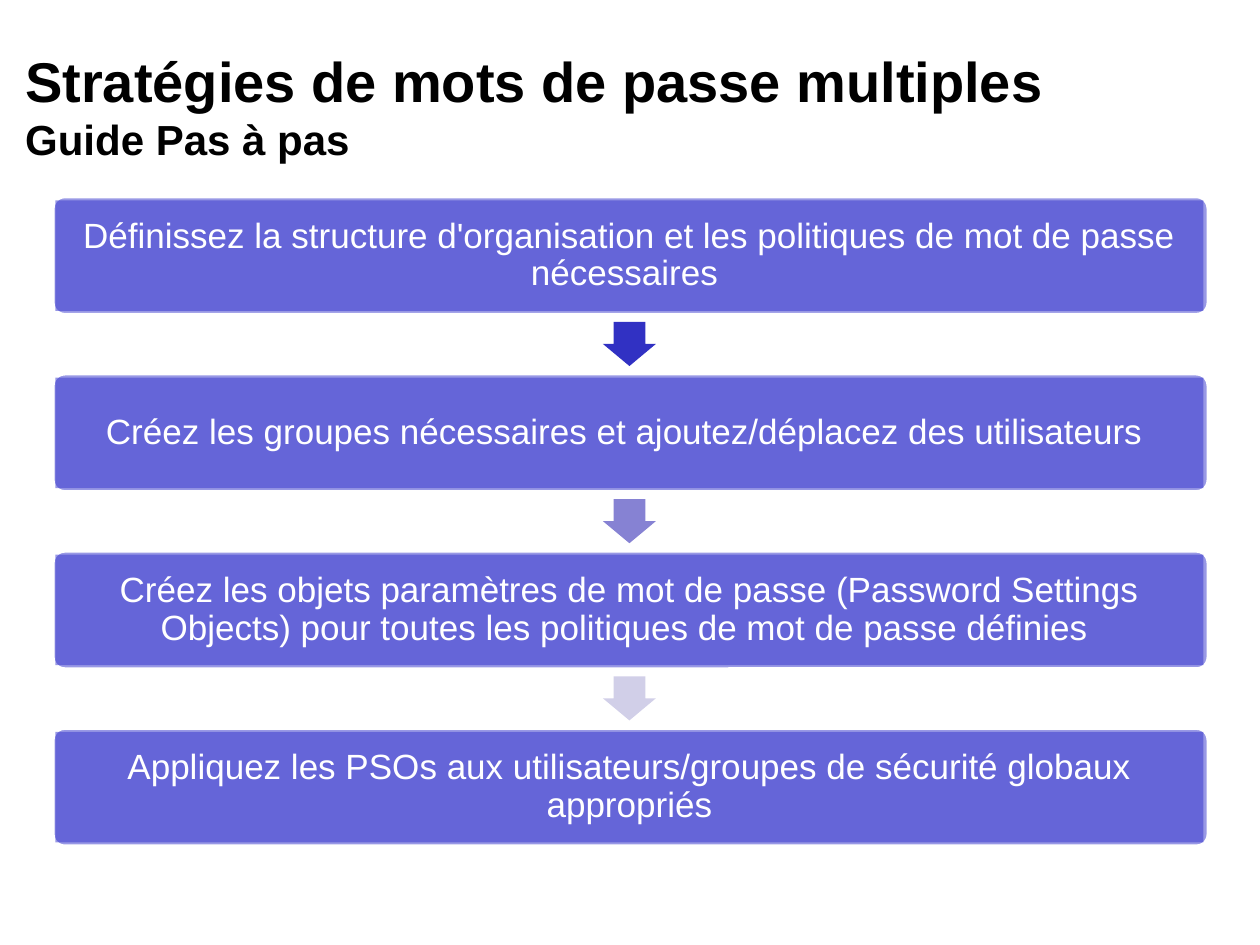
"""Build the slide on multiple password policies: four steps joined by arrows."""
import dataclasses
import typing

import lxml.etree
import pptx
import pptx.dml.color
import pptx.enum.shapes
import pptx.enum.text
import pptx.oxml.ns
import pptx.util

KIND = pptx.enum.shapes.MSO_SHAPE
ALIGN = pptx.enum.text.PP_ALIGN
WIDE, HIGH = 10, 7.5
TOP, PITCH = 0.208, 0.1875
BLUE, WHITE = "3333CC", "FFFFFF"


@dataclasses.dataclass(frozen=True)
class Box:
    """Place of a shape, as shares of the slide's size."""
    left: float
    top: float
    width: float
    height: float

    def place(self) -> list[int]:
        """Return left, top, width and height as lengths."""
        return [pptx.util.Inches(WIDE * self.left), pptx.util.Inches(HIGH * self.top),
                pptx.util.Inches(WIDE * self.width), pptx.util.Inches(HIGH * self.height)]


@dataclasses.dataclass(frozen=True)
class Step:
    """One step and the colour of the arrow below it, if any."""
    text: str
    arrow: str = ""


STEPS = [
    Step("Définissez la structure d'organisation et les politiques de mot de passe nécessaires ", "3131C3"),
    Step("Créez les groupes nécessaires et ajoutez/déplacez des utilisateurs ", "8682D3"),
    Step("Créez les objets paramètres de mot de passe (Password Settings Objects) "
         "pour toutes les politiques de mot de passe définies ", "D1CFE8"),
    Step("Appliquez les PSOs aux utilisateurs/groupes de sécurité globaux appropriés"),
]


def tint(hue: str) -> pptx.dml.color.RGBColor:
    """Turn a hex string into a colour."""
    return pptx.dml.color.RGBColor.from_string(hue)


def write(shape: typing.Any, text: str, sizes: tuple[int, ...], hue: str, align: ALIGN,
          bold: bool = False, space: float = 1.0, inset: float = 0.1) -> None:
    """Write one paragraph whose lines each have their own size."""
    frame = shape.text_frame
    frame.word_wrap = True
    frame.auto_size = pptx.enum.text.MSO_AUTO_SIZE.NONE
    frame.vertical_anchor = pptx.enum.text.MSO_ANCHOR.MIDDLE
    frame.margin_left = frame.margin_right = pptx.util.Inches(0.1)
    frame.margin_top = frame.margin_bottom = pptx.util.Inches(inset)
    para = frame.paragraphs[0]
    para.alignment, para.line_spacing = align, space
    for row, (line, size) in enumerate(zip(text.split("\n"), sizes)):
        if row:
            para.add_line_break()
        run = para.add_run()
        run.text = line
        run.font.name, run.font.size, run.font.bold = "Arial", pptx.util.Pt(size), bold
        run.font.color.rgb = tint(hue)


def draw(shapes: typing.Any, kind: KIND, box: Box, fill: str, alpha: int = 100, line: str = "") -> typing.Any:
    """Add a flat shape with a fill, and a line if one is named."""
    shape = shapes.add_shape(kind, *box.place())
    shape.shadow.inherit = False
    shape.fill.solid()
    shape.fill.fore_color.rgb = tint(fill)
    if alpha < 100:
        tone = shape.fill._xPr.find(".//" + pptx.oxml.ns.qn("a:srgbClr"))
        lxml.etree.SubElement(tone, pptx.oxml.ns.qn("a:alpha"), val=str(alpha * 1000))
    if line:
        shape.line.color.rgb = tint(line)
        shape.line.width = pptx.util.Pt(2)
    else:
        shape.line.fill.background()
    return shape


def add_step(shapes: typing.Any, step: Step, row: int) -> None:
    """Draw a step's panel with its text, then the arrow to the next."""
    top = TOP + row * PITCH
    group = shapes.add_group_shape().shapes
    panel = draw(group, KIND.ROUNDED_RECTANGLE, Box(0.042, top, 0.917, 0.125), BLUE, 50, WHITE)
    panel.adjustments[0] = 0.1
    label = draw(group, KIND.RECTANGLE, Box(0.044, top + 0.004, 0.911, 0.117), BLUE, 50)
    write(label, step.text, (20,), WHITE, ALIGN.CENTER, space=0.9)
    if step.arrow:
        arrow = draw(shapes, KIND.RIGHT_ARROW, Box(0.482, top + 0.128, 0.035, 0.056), step.arrow)
        arrow.rotation = 90
        arrow.adjustments[0], arrow.adjustments[1] = 0.6, 0.5


def main() -> None:
    """Build and save the slide."""
    deck = pptx.Presentation()
    deck.slide_width, deck.slide_height = pptx.util.Inches(WIDE), pptx.util.Inches(HIGH)
    slide = deck.slides.add_slide(deck.slide_layouts[5])
    title = slide.shapes.title
    title.left, title.top, title.width, title.height = Box(0.01, 0.047, 0.983, 0.129).place()
    write(title, "Stratégies de mots de passe multiples\nGuide Pas à pas", (32, 24),
          "000000", ALIGN.LEFT, bold=True, inset=0.05)
    for row, step in enumerate(STEPS):
        add_step(slide.shapes, step, row)
    deck.save("out.pptx")


if __name__ == "__main__":
    main()
